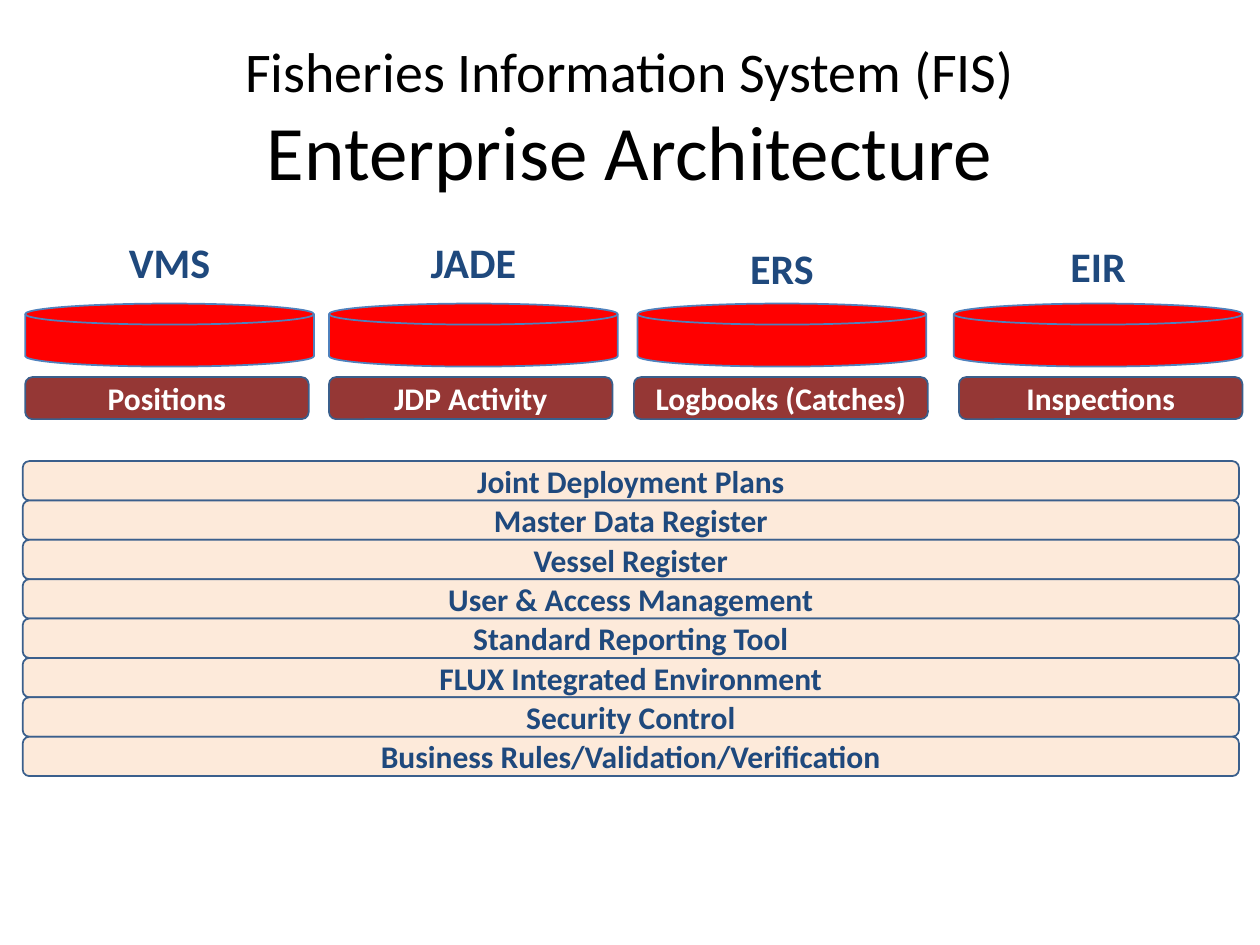
"""Build the Fisheries Information System enterprise architecture slide."""
from dataclasses import dataclass

from pptx import Presentation
from pptx.dml.color import RGBColor
from pptx.enum.shapes import MSO_SHAPE
from pptx.enum.text import MSO_ANCHOR, PP_ALIGN
from pptx.util import Pt


@dataclass(frozen=True)
class Theme:
    font: str = "Calibri"
    black: str = "000000"
    white: str = "FFFFFF"
    navy: str = "1F497D"
    red: str = "FF0000"
    maroon: str = "953735"
    cream: str = "FDEADA"
    disk_line: str = "4F81BD"
    bar_line: str = "3A5F8C"
    overline: int = 32
    title: int = 44
    system: int = 24
    label: int = 18


THEME = Theme()

SYSTEMS = [
    # name, name top, store left, content, content left, content width
    ("VMS", 134.5, 14.4, "Positions", 14.4, 162),
    ("JADE", 134.5, 188, "JDP Activity", 188, 162),
    ("ERS", 138, 364.3, "Logbooks (Catches)", 362.2, 168),
    ("EIR", 137, 545, "Inspections", 548, 162),
]
SERVICES = [
    "Joint Deployment Plans",
    "Master Data Register",
    "Vessel Register",
    "User & Access Management",
    "Standard Reporting Tool",
    "FLUX Integrated Environment",
    "Security Control",
    "Business Rules/Validation/Verification",
]
STORE_WIDTH = 165
SERVICE_TOP, SERVICE_PITCH = 263.5, 22.5


def write_text(frame, text, size, color, bold=False, new_line=False):
    frame.word_wrap = True
    frame.vertical_anchor = MSO_ANCHOR.MIDDLE
    frame.margin_left = frame.margin_right = Pt(0)
    frame.margin_top = frame.margin_bottom = Pt(0)
    paragraph = frame.paragraphs[0]
    paragraph.alignment = PP_ALIGN.CENTER
    if new_line:
        paragraph.add_line_break()
    run = paragraph.add_run()
    run.text = text
    run.font.name = THEME.font
    run.font.size = Pt(size)
    run.font.bold = bold
    run.font.color.rgb = RGBColor.from_string(color)


def add_text_area(slide, left, top, width, height):
    area = slide.shapes.add_textbox(Pt(left), Pt(top), Pt(width), Pt(height))
    return area.text_frame


def add_block(slide, preset, left, top, width, height, fill, line):
    block = slide.shapes.add_shape(preset, Pt(left), Pt(top), Pt(width), Pt(height))
    block.shadow.inherit = False
    block.fill.solid()
    block.fill.fore_color.rgb = RGBColor.from_string(fill)
    block.line.color.rgb = RGBColor.from_string(line)
    block.line.width = Pt(1)
    return block


def add_bar(slide, text, left, top, width, height, fill, color):
    bar = add_block(slide, MSO_SHAPE.ROUNDED_RECTANGLE, left, top, width, height,
                    fill, THEME.bar_line)
    write_text(bar.text_frame, text, size=THEME.label, color=color, bold=True)


def add_title(slide):
    heading = add_text_area(slide, 36, 21.6, 648, 90)
    write_text(heading, "Fisheries Information System (FIS)",
               size=THEME.overline, color=THEME.black)
    write_text(heading, "Enterprise Architecture",
               size=THEME.title, color=THEME.black, new_line=True)


def add_system(slide, name, name_top, store_left, content, content_left, content_width):
    add_block(slide, MSO_SHAPE.FLOWCHART_MAGNETIC_DISK, store_left, 173.5,
              STORE_WIDTH, 36, THEME.red, THEME.disk_line)
    name_area = add_text_area(slide, store_left, name_top, STORE_WIDTH, 30)
    write_text(name_area, name, size=THEME.system, color=THEME.navy, bold=True)
    add_bar(slide, content, content_left, 215.5, content_width, 24,
            THEME.maroon, THEME.white)


def main():
    deck = Presentation()
    deck.slide_width, deck.slide_height = Pt(720), Pt(540)
    slide = deck.slides.add_slide(deck.slide_layouts[6])
    add_title(slide)
    for system in SYSTEMS:
        add_system(slide, *system)
    for row, service in enumerate(SERVICES):
        add_bar(slide, service, 13, SERVICE_TOP + row * SERVICE_PITCH, 695,
                SERVICE_PITCH, THEME.cream, THEME.navy)
    deck.save("out.pptx")


if __name__ == "__main__":
    main()
